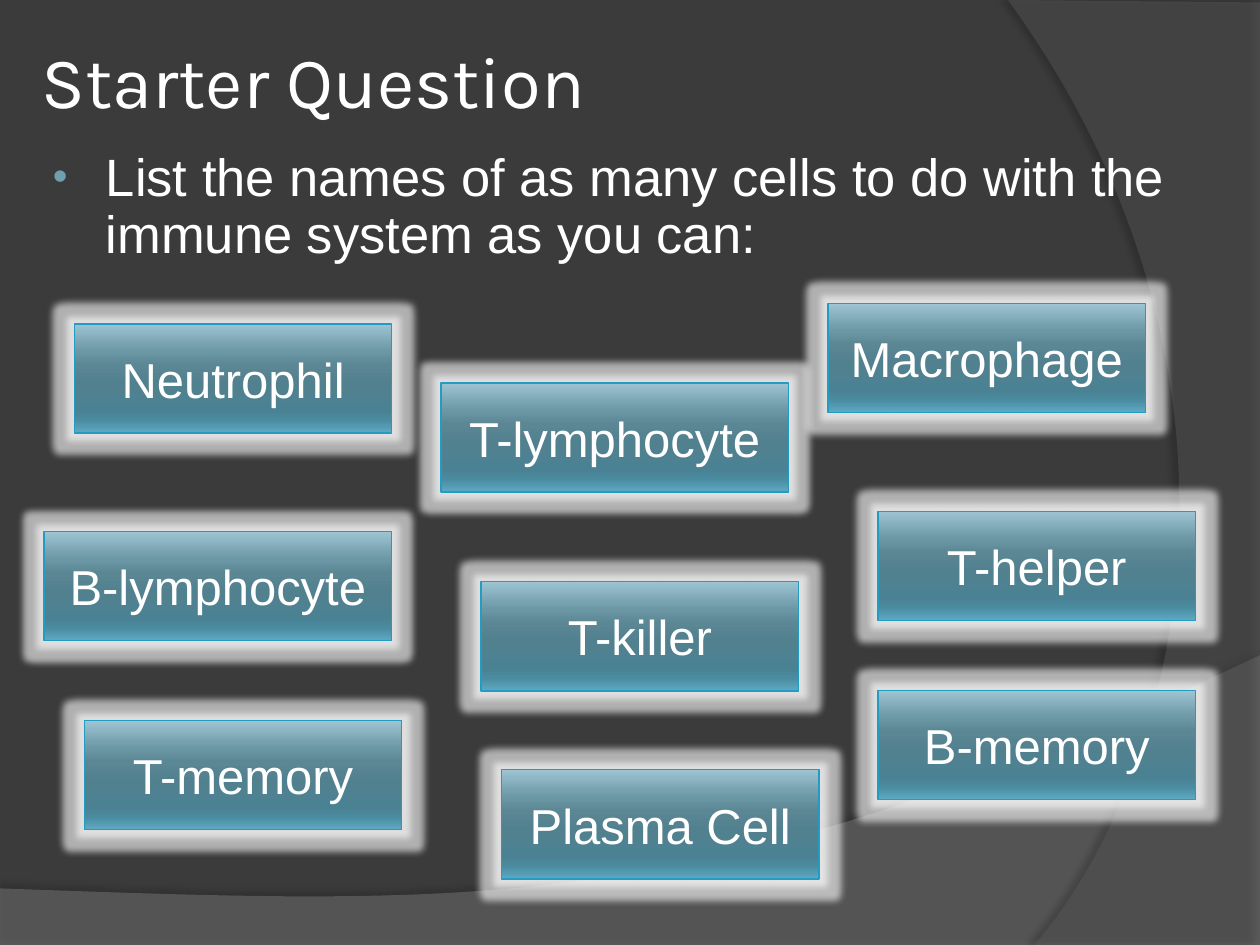
from dataclasses import dataclass

from lxml.etree import SubElement
from pptx import Presentation
from pptx.dml.color import RGBColor
from pptx.enum.shapes import MSO_SHAPE as Shape
from pptx.enum.text import MSO_ANCHOR as Anchor, MSO_AUTO_SIZE as AutoSize, PP_ALIGN as Align
from pptx.oxml.ns import qn
from pptx.util import Cm, Pt

Point = tuple[float, float]


@dataclass(frozen=True)
class Theme:
    background: str = "3B3B3B"
    text: str = "FFFFFF"
    bullet: str = "6EA0B0"
    box_line: str = "239BC2"
    glow: str = "FFFFFF"
    shadow: str = "000000"
    title_font: str = "Karla"
    body_font: str = "Arial"
    title_size: float = 41.4
    body_size: float = 30
    box_size: float = 28
    box_stops: tuple[tuple[int, str], ...] = (
        (0, "9EC4D2"), (25, "6C97A5"), (38, "5B8694"), (55, "51808F"),
        (80, "4A8294"), (88, "4A8BA0"), (100, "5DAAC2"),
    )


@dataclass(frozen=True)
class CellBox:
    name: str
    left: float
    top: float
    width: float = 6.4
    height: float = 2.2


@dataclass(frozen=True)
class Swoosh:
    """A background area: straight corners, then a Bezier edge from the last one."""
    corners: tuple[Point, ...]
    curve: tuple[Point, Point, Point]
    color: str
    opacity: int
    shadow_opacity: int
    shadow_distance: float
    shadow_angle: int


THEME = Theme()

SWOOSHES = (
    Swoosh(((0, 17.91), (0, 19.08), (25.4, 19.08), (25.4, 13.21)),
           ((14.2, 18.52), (9.93, 18.26), (0, 17.91)),
           "7F7F7F", 45, 35, 3.5, 270),
    Swoosh(((25.4, 0.05), (25.4, 19.05), (20.85, 19.05)),
           ((23.75, 15.72), (25.86, 7.62), (20.32, 0)),
           "5E5E5E", 40, 45, 4, 180),
)

CELLS = (
    CellBox("Neutrophil", 1.5, 6.53),
    CellBox("Macrophage", 16.69, 6.12),
    CellBox("B-lymphocyte", 0.89, 10.72, width=7),
    CellBox("T-lymphocyte", 8.89, 7.72, width=7),
    CellBox("T-helper", 17.7, 10.31),
    CellBox("T-killer", 9.7, 11.73),
    CellBox("T-memory", 1.7, 14.53),
    CellBox("Plasma Cell", 10.11, 15.52),
    CellBox("B-memory", 17.7, 13.92),
)


def add_color(parent, color: str, opacity: int = 100) -> None:
    clr = SubElement(parent, qn("a:srgbClr"), val=color)
    if opacity < 100:
        SubElement(clr, qn("a:alpha"), val=str(opacity * 1000))


def add_effect(sp, tag: str, color: str, opacity: int, **attrs: str) -> None:
    sp.shadow.inherit = False
    effects = sp.element.spPr.find(qn("a:effectLst"))
    add_color(SubElement(effects, qn(tag), **attrs), color, opacity)


def add_run(p, text: str, font: str, size: float) -> None:
    r = p.add_run()
    r.text = text
    r.font.name = font
    r.font.size = Pt(size)
    r.font.color.rgb = RGBColor.from_string(THEME.text)


def place(sp, left: float, top: float, width: float, height: float) -> None:
    sp.left, sp.top, sp.width, sp.height = map(Cm, (left, top, width, height))


def bezier(start: Point, curve: tuple[Point, Point, Point], steps: int = 60) -> list[Point]:
    """Points along a cubic curve, without its start."""
    points = []
    for i in range(1, steps + 1):
        t = i / steps
        weights = ((1 - t) ** 3, 3 * t * (1 - t) ** 2, 3 * t * t * (1 - t), t ** 3)
        x, y = (sum(w * c for w, c in zip(weights, axis)) for axis in zip(start, *curve))
        points.append((x, y))
    return points


def draw_swoosh(s, swoosh: Swoosh):
    outline = [*swoosh.corners, *bezier(swoosh.corners[-1], swoosh.curve)]
    points = [(Cm(x), Cm(y)) for x, y in outline]
    builder = s.shapes.build_freeform(*points[0])
    builder.add_line_segments(points[1:])
    sp = builder.convert_to_shape()
    sp.fill.solid()
    sp.fill.fore_color.rgb = RGBColor.from_string(swoosh.color)
    clr = sp.element.spPr.find(qn("a:solidFill"))[0]
    SubElement(clr, qn("a:alpha"), val=str(swoosh.opacity * 1000))
    sp.line.fill.background()
    add_effect(sp, "a:outerShdw", THEME.shadow, swoosh.shadow_opacity,
               blurRad=str(Pt(4)), dist=str(Pt(swoosh.shadow_distance)),
               dir=str(swoosh.shadow_angle * 60000), algn="ctr", rotWithShape="0")
    return sp


def fill_title(sp, text: str) -> None:
    place(sp, 0.71, 0.53, 24, 2.16)
    tf = sp.text_frame
    tf.auto_size = AutoSize.NONE
    tf.vertical_anchor = Anchor.MIDDLE
    tf.margin_left = tf.margin_right = tf.margin_top = tf.margin_bottom = Cm(0.13)
    p = tf.paragraphs[0]
    p.alignment = Align.LEFT
    add_run(p, text, THEME.title_font, THEME.title_size)


def fill_body(sp, text: str) -> None:
    place(sp, 0.71, 2.92, 24, 15.6)
    tf = sp.text_frame
    tf.auto_size = AutoSize.NONE
    tf.vertical_anchor = Anchor.TOP
    p = tf.paragraphs[0]
    p.line_spacing = 0.9
    p.space_before = Pt(THEME.body_size * 0.2)
    add_run(p, text, THEME.body_font, THEME.body_size)
    pPr = p._p.get_or_add_pPr()
    pPr.set("marL", str(Cm(1.17)))
    pPr.set("indent", str(Cm(-1.07)))
    add_color(SubElement(pPr, qn("a:buClr")), THEME.bullet)
    SubElement(pPr, qn("a:buSzPct"), val="80000")
    SubElement(pPr, qn("a:buFont"), typeface=THEME.body_font)
    SubElement(pPr, qn("a:buChar"), char="•")


def draw_cell(s, cell: CellBox) -> None:
    sp = s.shapes.add_shape(Shape.RECTANGLE, Cm(cell.left), Cm(cell.top),
                            Cm(cell.width), Cm(cell.height))
    sp.fill.gradient()
    sp.fill.gradient_angle = 270
    stops = sp.element.spPr.find(qn("a:gradFill")).find(qn("a:gsLst"))
    for stop in list(stops):
        stops.remove(stop)
    for position, color in THEME.box_stops:
        add_color(SubElement(stops, qn("a:gs"), pos=str(position * 1000)), color)
    sp.line.color.rgb = RGBColor.from_string(THEME.box_line)
    sp.line.width = Pt(0.75)
    add_effect(sp, "a:glow", THEME.glow, 60, rad=str(Pt(8)))
    tf = sp.text_frame
    tf.word_wrap = True
    tf.vertical_anchor = Anchor.MIDDLE
    p = tf.paragraphs[0]
    p.alignment = Align.CENTER
    add_run(p, cell.name, THEME.body_font, THEME.box_size)


def main() -> None:
    prs = Presentation()
    prs.slide_width, prs.slide_height = Cm(25.4), Cm(19.05)
    s = prs.slides.add_slide(prs.slide_layouts[1])
    s.background.fill.solid()
    s.background.fill.fore_color.rgb = RGBColor.from_string(THEME.background)

    title, body = s.placeholders
    for swoosh in SWOOSHES:
        title.element.addprevious(draw_swoosh(s, swoosh).element)
    fill_title(title, "Starter Question")
    fill_body(body, "List the names of as many cells to do with the immune system as you can:")
    for cell in CELLS:
        draw_cell(s, cell)
    prs.save("out.pptx")


if __name__ == "__main__":
    main()
